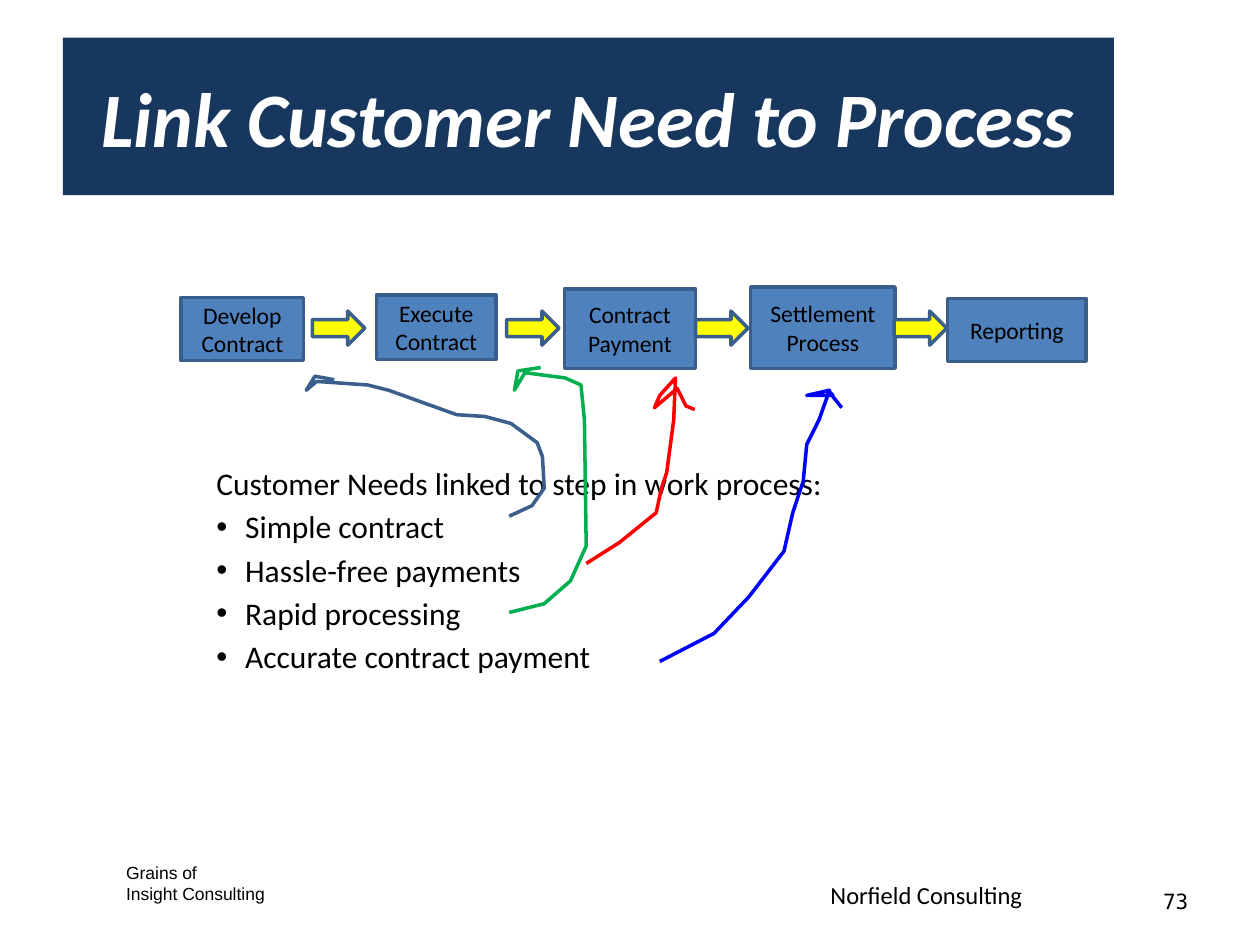
from typing import NamedTuple

from lxml.etree import SubElement
from pptx import Presentation
from pptx.dml.color import RGBColor
from pptx.enum.shapes import MSO_SHAPE as Preset
from pptx.enum.text import MSO_ANCHOR as Anchor, PP_ALIGN as Align
from pptx.oxml.ns import qn
from pptx.util import Pt

NAVY, STEEL, OUTLINE, YELLOW = "17375E", "4F81BD", "3A5F8C", "FFFF00"
BLACK, WHITE = "000000", "FFFFFF"
FLOW_MIDDLE = 187.5
ARROW_WIDTH, ARROW_HEIGHT = 30, 19.5
INDENT = 16.5


class Box(NamedTuple):
    left: float
    top: float
    width: float
    height: float


class Step(NamedTuple):
    label: str
    box: Box


class Stroke(NamedTuple):
    color: str
    points: list[tuple[float, float]]


class Caption(NamedTuple):
    lines: list[str]
    box: Box
    font: dict
    frame: dict = {}
    align: Align = Align.LEFT


# Process steps, in order of flow, and the left edges of the arrows between them
STEPS = [
    Step("Develop Contract", Box(103.5, 170, 70, 36)),
    Step("Execute Contract", Box(215, 168.5, 68.5, 37)),
    Step("Contract Payment", Box(322.5, 165, 75, 45.5)),
    Step("Settlement Process", Box(429, 164, 82.5, 46.5)),
    Step("Reporting", Box(541.5, 170.5, 79, 36)),
]
ARROW_LEFTS = [178.5, 289.5, 397.5, 511]

# Hand-drawn arrows from each need to its step
STROKES = [
    Stroke(OUTLINE, [
        (291, 295), (304, 289), (311, 279), (310, 261), (307, 253), (292, 242),
        (277, 238), (261, 237), (222, 223), (210, 220), (181, 218), (175, 223),
        (180, 215), (191, 217)]),
    Stroke("FF0000", [
        (335, 322), (354, 310), (375, 293), (378, 279), (381, 270), (385, 240),
        (386, 216), (377, 226), (374, 233), (387, 222), (392, 232), (397, 234)]),
    Stroke("00B050", [
        (291, 350), (311, 345), (326, 332), (335, 312), (334, 240), (332, 220),
        (323, 216), (300, 213), (294, 223), (296, 212), (309, 210)]),
    Stroke("0000FF", [
        (377, 378), (408, 362), (428, 341), (448, 315), (453, 293), (459, 275),
        (461, 254), (468, 240), (474, 223), (461, 226), (476, 226), (473, 223),
        (481, 233)]),
]

NEEDS = ["Customer Needs linked to step in work process:", "Simple contract",
         "Hassle-free payments", "Rapid processing", "Accurate contract payment"]

# Footers
FOOTERS = [
    Caption(["Grains of", "Insight Consulting"], Box(65, 489, 169, 32),
            {"name": "Arial", "size": Pt(10)}),
    Caption(["Norfield Consulting"], Box(467.5, 499.5, 210, 17),
            {"name": "Calibri", "size": Pt(14)}),
    Caption(["73"], Box(516, 500.5, 168, 29),
            {"name": "DejaVu Sans Mono", "size": Pt(12)},
            {"vertical_anchor": Anchor.MIDDLE, "margin_left": Pt(5),
             "margin_right": Pt(5), "margin_top": Pt(3), "margin_bottom": Pt(3)},
            Align.RIGHT),
]


def rgb(code: str) -> RGBColor:
    return RGBColor.from_string(code)


def apply(target, values: dict) -> None:
    for key, value in values.items():
        setattr(target, key, value)


def write(frame, lines: list[str], font: dict, color: str = BLACK,
          align: Align = Align.LEFT) -> None:
    frame.word_wrap = True
    for number, line in enumerate(lines):
        paragraph = frame.add_paragraph() if number else frame.paragraphs[0]
        paragraph.text = line
        paragraph.alignment = align
        apply(paragraph.runs[0].font, font)
        paragraph.runs[0].font.color.rgb = rgb(color)


def outline(shape, color: str) -> None:
    shape.shadow.inherit = False
    shape.line.color.rgb = rgb(color)
    shape.line.width = Pt(2)


def draw_block(slide, preset: Preset, box: Box, fill: str):
    block = slide.shapes.add_shape(preset, *map(Pt, box))
    block.fill.solid()
    block.fill.fore_color.rgb = rgb(fill)
    outline(block, OUTLINE)
    return block


def draw_stroke(slide, stroke: Stroke) -> None:
    start, *rest = stroke.points
    builder = slide.shapes.build_freeform(*start, scale=Pt(1))
    builder.add_line_segments(rest, close=False)
    curve = builder.convert_to_shape()
    curve.fill.background()
    outline(curve, stroke.color)


def draw_caption(slide, caption: Caption):
    frame = slide.shapes.add_textbox(*map(Pt, caption.box)).text_frame
    apply(frame, caption.frame)
    write(frame, caption.lines, caption.font, align=caption.align)
    return frame


def add_bullet(paragraph) -> None:
    properties = paragraph._p.get_or_add_pPr()
    properties.set("marL", str(Pt(INDENT)))
    properties.set("indent", str(-Pt(INDENT)))
    SubElement(properties, qn("a:buFont"), typeface="Arial")
    SubElement(properties, qn("a:buChar"), char="•")


def main() -> None:
    deck = Presentation()
    deck.slide_width, deck.slide_height = Pt(720), Pt(540)
    slide = deck.slides.add_slide(deck.slide_layouts[6])

    for footer in FOOTERS:
        draw_caption(slide, footer)

    # Customer needs
    needs = draw_caption(slide, Caption(
        NEEDS, Box(116.5, 261.5, 486, 134), {"name": "Calibri", "size": Pt(18)}))
    for need in needs.paragraphs[1:]:
        need.space_before = Pt(3.2)
        add_bullet(need)

    # Title band
    title = draw_block(slide, Preset.RECTANGLE, Box(36, 21.5, 600.5, 90), NAVY)
    title.line.fill.background()
    write(title.text_frame, ["Link Customer Need to Process"],
          {"name": "Calibri", "size": Pt(44), "bold": True, "italic": True},
          WHITE, Align.CENTER)

    # Process flow
    for step in STEPS:
        block = draw_block(slide, Preset.RECTANGLE, step.box, STEEL)
        write(block.text_frame, [step.label],
              {"name": "Calibri", "size": Pt(13.5)}, align=Align.CENTER)
    for left in ARROW_LEFTS:
        draw_block(slide, Preset.RIGHT_ARROW,
                   Box(left, FLOW_MIDDLE - ARROW_HEIGHT / 2, ARROW_WIDTH, ARROW_HEIGHT),
                   YELLOW)
    for stroke in STROKES:
        draw_stroke(slide, stroke)

    deck.save("out.pptx")


if __name__ == "__main__":
    main()
